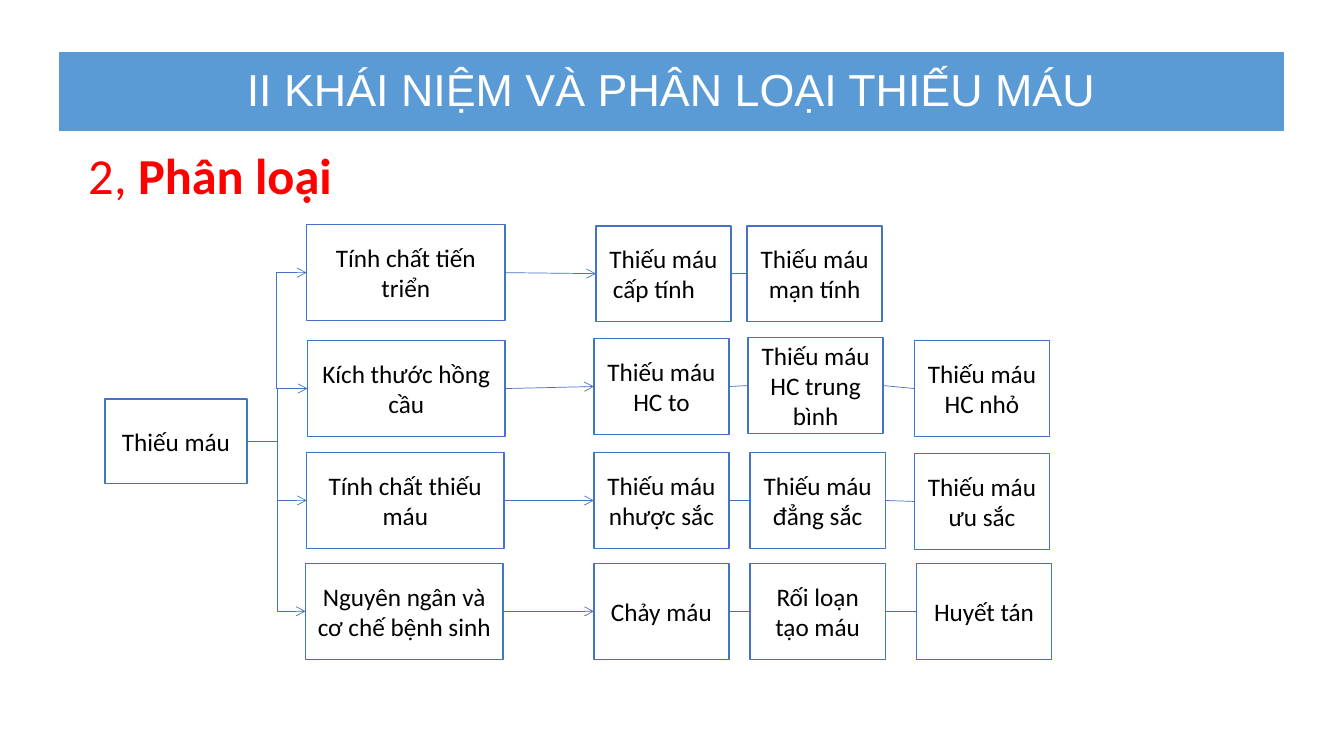
import pptx
import pptx.dml.color
import pptx.enum.shapes
import pptx.enum.text
import pptx.oxml
import pptx.oxml.ns
import pptx.util

PX = 9144
BLUE = "4472C4"
BOX_HEIGHT = 95
CELL_WIDTH = 134
TRUNK_X = 275
ROOT = (104, 396, 141, 84)
BRANCHES = [
    ((304, 223, 197), "Tính chất tiến triển",
     [(591, 224, "Thiếu máu cấp tính\t"), (741, 224, "Thiếu máu mạn tính")]),
    ((305, 338, 196), "Kích thước hồng cầu",
     [(589, 336, "Thiếu máu HC to"), (742, 335, "Thiếu máu HC trung bình"),
      (907, 338, "Thiếu máu HC nhỏ")]),
    ((304, 449, 196), "Tính chất thiếu máu",
     [(589, 449, "Thiếu máu nhược sắc"), (744, 449, "Thiếu máu đẳng sắc"),
      (907, 450, "Thiếu máu ưu sắc")]),
    ((303, 559, 196), "Nguyên ngân và cơ chế bệnh sinh",
     [(589, 559, "Chảy máu"), (744, 559, "Rối loạn tạo máu"),
      (909, 559, "Huyết tán")]),
]


def px(*lengths):
    return [pptx.util.Emu(round(length * PX)) for length in lengths]


def color(hex_string):
    return pptx.dml.color.RGBColor.from_string(hex_string)


def add_text(paragraph, text, size=18, font="Calibri", fill="000000", bold=False):
    run = paragraph.add_run()
    run.text = text
    run.font.size = pptx.util.Pt(size)
    run.font.name = font
    run.font.bold = bold
    run.font.color.rgb = color(fill)


def add_box(slide, box, text):
    shape = slide.shapes.add_shape(
        pptx.enum.shapes.MSO_SHAPE.RECTANGLE, *px(*box))
    shape.shadow.inherit = False
    shape.fill.background()
    shape.line.color.rgb = color(BLUE)
    shape.line.width = pptx.util.Pt(1)
    frame = shape.text_frame
    frame.word_wrap = True
    frame.vertical_anchor = pptx.enum.text.MSO_ANCHOR.MIDDLE
    paragraph = frame.paragraphs[0]
    paragraph.alignment = pptx.enum.text.PP_ALIGN.CENTER
    add_text(paragraph, text)


def add_line(slide, start, end, arrow=False, elbow=False):
    kinds = pptx.enum.shapes.MSO_CONNECTOR
    connector = slide.shapes.add_connector(
        kinds.ELBOW if elbow else kinds.STRAIGHT, *px(*start, *end))
    connector.line.color.rgb = color(BLUE)
    connector.line.width = pptx.util.Pt(0.5)
    if arrow:
        line = connector.line._get_or_add_ln()
        pptx.oxml.ns.qn("a:tailEnd")
        line.append(pptx.oxml.parse_xml(
            '<a:tailEnd %s type="arrow"/>' % pptx.oxml.ns.nsdecls("a")))
    connector._element.spPr.append(pptx.oxml.parse_xml(
        "<a:effectLst %s/>" % pptx.oxml.ns.nsdecls("a")))
    return connector


def add_corner_arrow(slide, start, end):
    center_x, center_y = (start[0] + end[0]) / 2, (start[1] + end[1]) / 2
    half_width = (end[0] - start[0]) / 2
    half_height = abs(end[1] - start[1]) / 2
    downward = end[1] > start[1]
    rise = half_width if downward else -half_width
    connector = add_line(slide, (center_x + half_height, center_y - rise),
                         (center_x - half_height, center_y + rise),
                         arrow=True, elbow=True)
    properties = connector._element.spPr
    properties.find(pptx.oxml.ns.qn("a:prstGeom")).set("prst", "bentConnector2")
    properties.find(pptx.oxml.ns.qn("a:xfrm")).set(
        "rot", "16200000" if downward else "5400000")


def add_banner(slide, box):
    title = slide.shapes.title
    title.left, title.top, title.width, title.height = px(*box)
    title.fill.solid()
    title.fill.fore_color.rgb = color("5B9BD5")
    title.line.color.rgb = color("FFFFFF")
    title.line.width = pptx.util.Pt(1.5)
    frame = title.text_frame
    frame.word_wrap = True
    frame.auto_size = pptx.enum.text.MSO_AUTO_SIZE.NONE
    frame.vertical_anchor = pptx.enum.text.MSO_ANCHOR.MIDDLE
    paragraph = frame.paragraphs[0]
    paragraph.alignment = pptx.enum.text.PP_ALIGN.CENTER
    paragraph.line_spacing = 0.9
    add_text(paragraph, "II KHÁI NIỆM VÀ PHÂN LOẠI THIẾU MÁU",
             size=32, font="Arial", fill="FFFFFF")


def add_heading(slide, box):
    frame = slide.shapes.add_textbox(*px(*box)).text_frame
    frame.word_wrap = True
    frame.auto_size = pptx.enum.text.MSO_AUTO_SIZE.SHAPE_TO_FIT_TEXT
    paragraph = frame.paragraphs[0]
    add_text(paragraph, "2, ", size=36, fill="FF0000")
    add_text(paragraph, "Phân loại", size=36, fill="FF0000", bold=True)


def add_branch(slide, box, text, cells):
    left, top, width = box
    middle = BOX_HEIGHT / 2
    add_box(slide, (left, top, width, BOX_HEIGHT), text)
    tail = (left + width, top + middle)
    for index, (cell_left, cell_top, cell_text) in enumerate(cells):
        add_box(slide, (cell_left, cell_top, CELL_WIDTH, BOX_HEIGHT), cell_text)
        add_line(slide, tail, (cell_left, cell_top + middle), arrow=index == 0)
        tail = (cell_left + CELL_WIDTH, cell_top + middle)


def add_tree(slide, root):
    left, top, width, height = root
    root_middle = top + height / 2
    add_box(slide, root, "Thiếu máu")
    for branch in BRANCHES:
        add_branch(slide, *branch)
    ends = [(box[0], box[1] + BOX_HEIGHT / 2) for box, _, _ in BRANCHES]
    add_line(slide, (left + width, root_middle), ends[1], arrow=True, elbow=True)
    add_corner_arrow(slide, (TRUNK_X - 1, ends[1][1]), ends[0])
    add_corner_arrow(slide, (TRUNK_X, root_middle), ends[2])
    add_corner_arrow(slide, (TRUNK_X, ends[2][1]), ends[3])


def main():
    presentation = pptx.Presentation()
    presentation.slide_width, presentation.slide_height = px(1333, 750)
    slide = presentation.slides.add_slide(presentation.slide_layouts[5])
    add_banner(slide, (57, 51, 1218, 80))
    add_tree(slide, ROOT)
    add_heading(slide, (78, 138, 336, 71))
    presentation.save("out.pptx")


if __name__ == "__main__":
    main()
